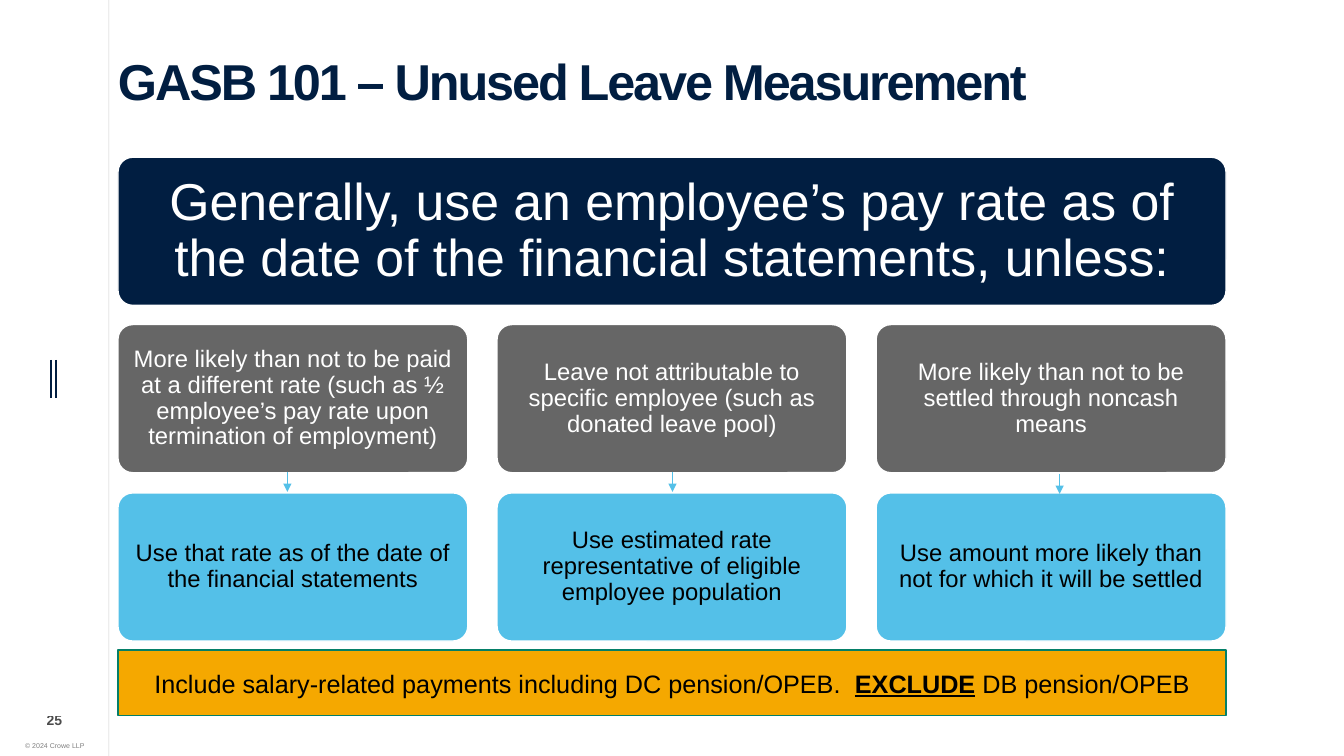
"""Builds the slide on measuring unused leave under GASB 101."""
from dataclasses import dataclass

from pptx import Presentation
from pptx.dml.color import RGBColor
from pptx.enum import shapes, text
from pptx.oxml.ns import qn
from pptx.util import Inches, Pt
from lxml import etree

TITLE = "GASB 101 – Unused Leave Measurement"
RULE = ("Generally, use an employee’s pay rate as of the date of the "
        "financial statements, unless:")
CASES = [
    ("More likely than not to be paid at a different rate (such as ½ employee’s "
     "pay rate upon termination of employment)",
     "Use that rate as of the date of the financial statements"),
    ("Leave not attributable to specific employee (such as donated leave pool)",
     "Use estimated rate representative of eligible employee population"),
    ("More likely than not to be settled through noncash means",
     "Use amount more likely than not for which it will be settled"),
]
REMINDER = [("Include salary-related payments including DC pension/OPEB.  ", False),
            ("EXCLUDE", True), (" DB pension/OPEB", False)]
COPYRIGHT = "© 2024 Crowe LLP"
PAGE_NUMBER = "25"

LEFT, WIDTH = 1.17, 10.99
CARD_WIDTH, CARD_HEIGHT = 3.47, 1.47
COLUMN_STEP = (WIDTH - CARD_WIDTH) / 2
RULE_TOP, CASE_TOP, ANSWER_TOP = 1.56, 3.22, 4.89
ARROWS = [(2.85, 4.68), (6.67, 4.68), (10.51, 4.7)]
ARROW_LENGTH = 0.2


@dataclass(frozen=True)
class Theme:
    """Colours, font and type sizes."""
    font: str = "Arial"
    navy: str = "011E41"
    grey: str = "666666"
    blue: str = "54C0E8"
    amber: str = "F5A800"
    teal: str = "047F68"
    black: str = "000000"
    white: str = "FFFFFF"
    muted: str = "808080"
    title_size: float = 36
    rule_size: float = 37
    card_size: float = 17
    reminder_size: float = 18
    number_size: float = 10
    copyright_size: float = 5


THEME = Theme()


def color(value):
    """Turn a hex value into a colour."""
    return RGBColor.from_string(value)


def set_alpha(properties, percent):
    """Make the solid colour inside the properties translucent."""
    swatch = properties.find(".//" + qn("a:srgbClr"))
    etree.SubElement(swatch, qn("a:alpha")).set("val", str(percent * 1000))


def style_span(span, size, ink, bold=False):
    """Format one run."""
    span.font.name = THEME.font
    span.font.size = Pt(size)
    span.font.color.rgb = color(ink)
    span.font.bold = bold


def set_frame(frame, insets, anchor, wrap=True):
    """Set insets, anchor and wrapping of a text frame."""
    frame.auto_size = text.MSO_AUTO_SIZE.NONE
    frame.word_wrap = wrap
    frame.vertical_anchor = anchor
    (frame.margin_left, frame.margin_top,
     frame.margin_right, frame.margin_bottom) = map(Inches, insets)


def add_line(page, start, end, ink, weight):
    """Draw a straight line without shadow."""
    line = page.shapes.add_connector(
        shapes.MSO_CONNECTOR.STRAIGHT, *map(Inches, start + end))
    line.line.color.rgb = color(ink)
    line.line.width = Pt(weight)
    etree.SubElement(line._element.spPr, qn("a:effectLst"))
    return line


def add_box(page, kind, area, fill, outline):
    """Draw a filled shape with a one-point outline."""
    box = page.shapes.add_shape(kind, *map(Inches, area))
    box.shadow.inherit = False
    box.fill.solid()
    box.fill.fore_color.rgb = color(fill)
    box.line.color.rgb = color(outline)
    box.line.width = Pt(1)
    return box


def add_card(page, area, words, fill, ink, size, inset):
    """Draw a rounded card with centred text."""
    box = add_box(page, shapes.MSO_SHAPE.ROUNDED_RECTANGLE, area, fill, THEME.white)
    box.adjustments[0] = 0.1
    set_frame(box.text_frame, [inset] * 4, text.MSO_ANCHOR.MIDDLE)
    para = box.text_frame.paragraphs[0]
    para.text = words
    para.alignment = text.PP_ALIGN.CENTER
    para.line_spacing = 0.9
    style_span(para.runs[0], size, ink)


def add_label(page, area, words, size, ink, insets, anchor, wrap, bold=False):
    """Add a small centred label and return its run."""
    box = page.shapes.add_textbox(*map(Inches, area))
    set_frame(box.text_frame, insets, anchor, wrap)
    para = box.text_frame.paragraphs[0]
    para.text = words
    para.alignment = text.PP_ALIGN.CENTER
    style_span(para.runs[0], size, ink, bold)
    return para.runs[0]


def add_title(page):
    """Place and format the title."""
    title = page.shapes.title
    title.left, title.top, title.width, title.height = map(
        Inches, (LEFT, 0.4, 11.24, 1.5))
    set_frame(title.text_frame, (0, 0.21, 0, 0), text.MSO_ANCHOR.TOP)
    para = title.text_frame.paragraphs[0]
    para.text = TITLE
    para.alignment = text.PP_ALIGN.LEFT
    para.line_spacing = 0.8
    style_span(para.runs[0], THEME.title_size, THEME.navy, True)
    para.runs[0].font._element.set("spc", "-150")


def add_margin(page):
    """Draw the margin rules, copyright line and page number."""
    for x in (0.51, 0.56):
        add_line(page, (x, 3.57), (x, 3.95), THEME.navy, 1.5)
    divider = add_line(page, (1.08, 0), (1.08, 7.5), THEME.black, 0.5)
    set_alpha(divider._element.spPr, 20)
    add_label(page, (0.14, 7.31, 0.81, 0.19), COPYRIGHT, THEME.copyright_size,
              THEME.muted, (0.1, 0.05, 0.1, 0.05), text.MSO_ANCHOR.TOP, False)
    number = add_label(page, (0.26, 7.02, 0.56, 0.25), PAGE_NUMBER,
                       THEME.number_size, THEME.black, (0, 0, 0, 0),
                       text.MSO_ANCHOR.MIDDLE, True, True)
    set_alpha(number.font._element, 70)


def add_cases(page):
    """Draw the rule, its exceptions and the arrows between them."""
    add_card(page, (LEFT, RULE_TOP, WIDTH, CARD_HEIGHT), RULE,
             THEME.navy, THEME.white, THEME.rule_size, 0.16)
    for column, (case, answer) in enumerate(CASES):
        x = LEFT + column * COLUMN_STEP
        for top, words, fill, ink in ((CASE_TOP, case, THEME.grey, THEME.white),
                                      (ANSWER_TOP, answer, THEME.blue, THEME.black)):
            add_card(page, (x, top, CARD_WIDTH, CARD_HEIGHT), words,
                     fill, ink, THEME.card_size, 0.07)
    for x, y in ARROWS:
        arrow = add_line(page, (x, y), (x, y + ARROW_LENGTH), THEME.blue, 0.5)
        etree.SubElement(arrow.line._ln, qn("a:tailEnd")).set("type", "triangle")


def add_reminder(page):
    """Draw the reminder bar."""
    bar = add_box(page, shapes.MSO_SHAPE.RECTANGLE, (LEFT, 6.45, WIDTH, 0.65),
                  THEME.amber, THEME.teal)
    set_frame(bar.text_frame, (0.1, 0.05, 0.1, 0.05), text.MSO_ANCHOR.MIDDLE)
    para = bar.text_frame.paragraphs[0]
    para.alignment = text.PP_ALIGN.CENTER
    for words, strong in REMINDER:
        span = para.add_run()
        span.text = words
        style_span(span, THEME.reminder_size, THEME.black, strong)
        span.font.underline = strong


def main():
    """Build and save the deck."""
    deck = Presentation()
    deck.slide_width, deck.slide_height = Inches(13.33), Inches(7.5)
    page = deck.slides.add_slide(deck.slide_layouts[5])
    add_margin(page)
    add_title(page)
    add_cases(page)
    add_reminder(page)
    deck.save("out.pptx")


if __name__ == "__main__":
    main()
